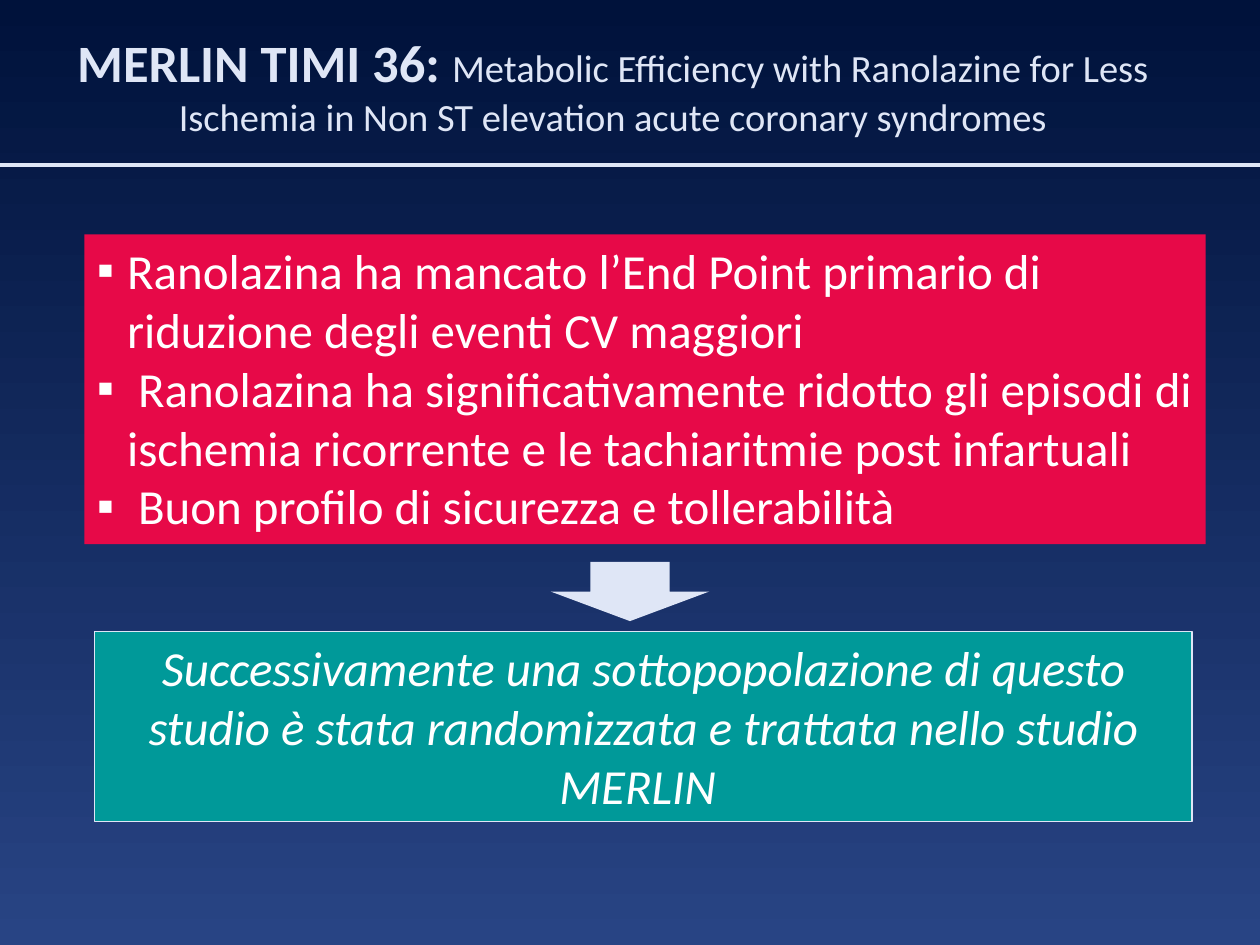
"""Build the MERLIN TIMI 36 conclusions slide."""
from lxml import etree
from pptx import Presentation
from pptx.dml.color import RGBColor
from pptx.enum import shapes, text
from pptx.oxml import ns
from pptx.util import Inches, Pt

COLORS = {name: RGBColor.from_string(value) for name, value in {
    "top": "00123B", "bottom": "284484", "pale": "DFE6F6",
    "red": "E70948", "teal": "009999", "white": "FFFFFF"}.items()}
FINDINGS = [
    "Ranolazina ha mancato l’End Point primario di riduzione degli eventi CV maggiori",
    " Ranolazina ha significativamente ridotto gli episodi di ischemia ricorrente "
    "e le tachiaritmie post infartuali",
    " Buon profilo di sicurezza e tollerabilità",
]
FOLLOW_UP = ("Successivamente una sottopopolazione di questo studio è stata "
             "randomizzata e trattata nello studio MERLIN ")
TITLE = [("MERLIN TIMI 36: ", 30, True),
         ("Metabolic Efficiency with Ranolazine for Less Ischemia in Non ST "
          "elevation acute coronary syndromes", 22, False)]


def add_box(kind, left, top, width, height, fill=None):
    box = page.shapes.add_shape(kind, Inches(left), Inches(top), Inches(width), Inches(height))
    box.shadow.inherit = False
    box.line.fill.background()
    if fill:
        box.fill.solid()
        box.fill.fore_color.rgb = COLORS[fill]
    else:
        box.fill.background()
    box.text_frame.word_wrap = True
    box.text_frame.vertical_anchor = text.MSO_ANCHOR.TOP
    return box


def set_font(font, size, color):
    font.name = "Calibri"
    font.size = Pt(size)
    font.color.rgb = COLORS[color]


deck = Presentation()
deck.slide_width, deck.slide_height = Inches(10), Inches(7.5)
page = deck.slides.add_slide(deck.slide_layouts[6])
backdrop = page.background.fill
backdrop.gradient()
backdrop.gradient_angle = 90
for stop, name in zip(backdrop.gradient_stops, ("bottom", "top")):
    stop.color.rgb = COLORS[name]

findings = add_box(shapes.MSO_SHAPE.RECTANGLE, 0.67, 1.86, 8.9, 2.46, "red")
frame = findings.text_frame
for index, finding in enumerate(FINDINGS):
    para = frame.add_paragraph() if index else frame.paragraphs[0]
    para.text = finding
    para.alignment = text.PP_ALIGN.LEFT
    props = para._p.get_or_add_pPr()
    props.set("marL", str(Inches(0.24)))
    props.set("indent", str(Inches(-0.24)))
    etree.SubElement(props, ns.qn("a:buFont"), typeface="Arial")
    etree.SubElement(props, ns.qn("a:buChar"), char="▪")
    set_font(para.font, 28, "white")

follow_up = add_box(shapes.MSO_SHAPE.RECTANGLE, 0.75, 5.01, 8.71, 1.51, "teal")
follow_up.line.color.rgb = COLORS["pale"]
follow_up.line.width = Pt(0.75)
para = follow_up.text_frame.paragraphs[0]
para.text = FOLLOW_UP
para.alignment = text.PP_ALIGN.CENTER
set_font(para.font, 28, "white")
para.font.italic = True

rule = page.shapes.add_connector(
    shapes.MSO_CONNECTOR.STRAIGHT, Inches(0), Inches(1.31), Inches(10), Inches(1.31))
rule.line.color.rgb = COLORS["pale"]
rule.line.width = Pt(2.25)
etree.SubElement(rule._element.spPr, ns.qn("a:effectLst"))

title = add_box(shapes.MSO_SHAPE.ROUNDED_RECTANGLE, 0, 0, 9.73, 1.34)
title.text_frame.vertical_anchor = text.MSO_ANCHOR.MIDDLE
para = title.text_frame.paragraphs[0]
para.alignment = text.PP_ALIGN.CENTER
for words, size, bold in TITLE:
    span = para.add_run()
    span.text = words
    set_font(span.font, size, "pale")
    span.font.bold = bold

add_box(shapes.MSO_SHAPE.DOWN_ARROW, 4.37, 4.46, 1.26, 0.47, "pale")

deck.save("out.pptx")
